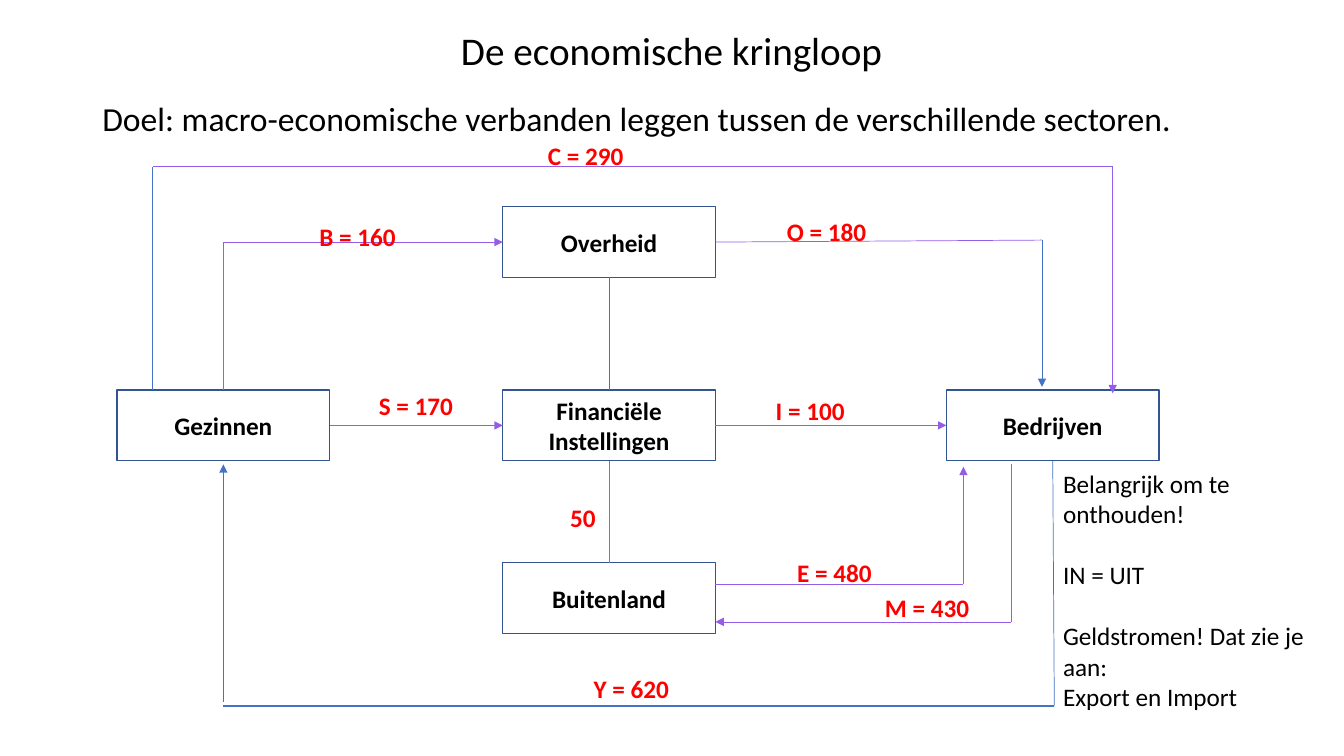
from dataclasses import dataclass

from lxml import etree
from pptx import Presentation
from pptx.dml.color import RGBColor
from pptx.enum.shapes import MSO_CONNECTOR, MSO_SHAPE
from pptx.enum.text import MSO_ANCHOR, PP_ALIGN
from pptx.oxml.ns import qn
from pptx.util import Cm, Pt

STRAIGHT, RECT = MSO_CONNECTOR.STRAIGHT, MSO_SHAPE.RECTANGLE
LEFT, CENTER = PP_ALIGN.LEFT, PP_ALIGN.CENTER
TOP_ANCHOR, MIDDLE = MSO_ANCHOR.TOP, MSO_ANCHOR.MIDDLE
TOP, LEFT_SIDE, BOTTOM, RIGHT_SIDE = range(4)


@dataclass
class Theme:
    font: str = "Calibri"
    black: RGBColor = RGBColor(0, 0, 0)
    white: RGBColor = RGBColor(255, 255, 255)
    red: RGBColor = RGBColor(255, 0, 0)
    border: RGBColor = RGBColor(0x32, 0x54, 0x91)
    blue: RGBColor = RGBColor(0x44, 0x72, 0xC4)
    purple: RGBColor = RGBColor(0x94, 0x5D, 0xE8)
    title: int = 28
    goal: int = 24
    body: int = 18


theme = Theme()


def write(p, text, size, color, bold=False, align=LEFT):
    p.alignment = align
    r = p.add_run()
    r.text = text
    r.font.name, r.font.size = theme.font, Pt(size)
    r.font.bold, r.font.color.rgb = bold, color


def add_box(x, y, w, h, anchor=TOP_ANCHOR):
    tf = s.shapes.add_textbox(Cm(x), Cm(y), Cm(w), Cm(h)).text_frame
    tf.word_wrap = True
    tf.vertical_anchor = anchor
    return tf


prs = Presentation()
prs.slide_width, prs.slide_height = Cm(33.87), Cm(19.05)
s = prs.slides.add_slide(prs.slide_layouts[6])

# Goal
tf = add_box(2.33, 2.4, 29.21, 1.3, MIDDLE)
tf.paragraphs[0].line_spacing = 0.9
write(tf.paragraphs[0],
      "Doel: macro-economische verbanden leggen tussen de verschillende sectoren.",
      theme.goal, theme.black)

# Sectors
sectors = {}
for name, x, y in [
    ("Overheid", 12.67, 5.21),
    ("Financiële Instellingen", 12.67, 9.83),
    ("Buitenland", 12.67, 14.18),
    ("Gezinnen", 2.95, 9.83),
    ("Bedrijven", 23.85, 9.83),
]:
    sp = s.shapes.add_shape(RECT, Cm(x), Cm(y), Cm(5.36), Cm(1.78))
    sp.shadow.inherit = False
    sp.fill.solid()
    sp.fill.fore_color.rgb = theme.white
    sp.line.color.rgb, sp.line.width = theme.border, Pt(1)
    tf = sp.text_frame
    tf.word_wrap, tf.vertical_anchor = True, MIDDLE
    write(tf.paragraphs[0], name, theme.body, theme.black, True, CENTER)
    sectors[name] = sp

# Flows: each end is a point in cm or a (sector, side) pair
bank = "Financiële Instellingen"
flows = [
    # Y
    (("Bedrijven", BOTTOM), (26.57, 17.78), theme.blue, 0.5, False),
    ((26.57, 17.78), (5.63, 17.78), theme.blue, 1.5, False),
    ((5.63, 17.68), (5.63, 11.7), theme.blue, 0.5, True),
    # S and I
    (("Gezinnen", RIGHT_SIDE), (bank, LEFT_SIDE), theme.purple, 0.5, True),
    ((bank, RIGHT_SIDE), ("Bedrijven", LEFT_SIDE), theme.purple, 0.5, True),
    # B
    (("Gezinnen", TOP), (5.63, 6.1), theme.purple, 0.5, False),
    ((5.63, 6.1), ("Overheid", LEFT_SIDE), theme.purple, 0.5, True),
    # C
    ((3.85, 9.83), (3.85, 4.2), theme.blue, 0.5, False),
    ((3.85, 4.2), (28.04, 4.2), theme.purple, 0.5, False),
    ((28.04, 4.2), (28.04, 9.91), theme.purple, 0.5, True),
    # O
    (("Overheid", RIGHT_SIDE), (26.26, 6.05), theme.purple, 0.5, False),
    ((26.26, 6.05), (26.26, 9.75), theme.blue, 0.5, True),
    # Balances with the financial institutions
    (("Overheid", BOTTOM), (bank, TOP), theme.blue, 0.5, False),
    ((bank, BOTTOM), ("Buitenland", TOP), theme.purple, 0.5, False),
    # E
    ((18.03, 14.72), (24.28, 14.72), theme.purple, 0.5, False),
    ((24.28, 14.72), (24.28, 11.76), theme.purple, 0.5, True),
    # M
    ((25.48, 11.7), (25.48, 15.67), theme.purple, 0.5, False),
    ((25.48, 15.67), (18.03, 15.67), theme.purple, 0.5, True),
]
for start, end, color, width, arrow in flows:
    joined = [stop[0] in sectors for stop in (start, end)]
    x1, y1 = (0, 0) if joined[0] else start
    x2, y2 = (0, 0) if joined[1] else end
    line = s.shapes.add_connector(STRAIGHT, Cm(x1), Cm(y1), Cm(x2), Cm(y2))
    if joined[0]:
        line.begin_connect(sectors[start[0]], start[1])
    if joined[1]:
        line.end_connect(sectors[end[0]], end[1])
    line.line.color.rgb, line.line.width = color, Pt(width)
    if arrow:
        etree.SubElement(line.line._get_or_add_ln(), qn("a:tailEnd"), type="triangle")
    etree.SubElement(line._element.spPr, qn("a:effectLst"))

# Amounts
for text, x, y in [
    ("B = 160", 7.8, 5.44),
    ("S = 170", 9.3, 9.7),
    ("50", 14.12, 12.53),
    ("Y = 620", 14.71, 16.84),
    ("E = 480", 19.84, 13.92),
    ("M = 430", 22.05, 14.81),
    ("I = 100", 19.3, 9.83),
    ("O = 180", 19.58, 5.33),
    ("C = 290", 13.56, 3.4),
]:
    tf = add_box(x, y, 3, 1.02)
    write(tf.paragraphs[0], text, theme.body, theme.red, True)

# Reminder
tf = add_box(26.54, 11.68, 7.26, 6.4)
for i, (text, gap) in enumerate([
    ("Belangrijk om te onthouden!", 0),
    ("IN = UIT", 22),
    ("Geldstromen! Dat zie je aan:", 22),
    ("Export en Import", 0),
]):
    p = tf.add_paragraph() if i else tf.paragraphs[0]
    p.space_before = Pt(gap)
    write(p, text, theme.body, theme.black)

# Title
tf = add_box(5.94, 0.53, 21.97, 1.45)
write(tf.paragraphs[0], "De economische kringloop", theme.title, theme.black, align=CENTER)

prs.save("out.pptx")
